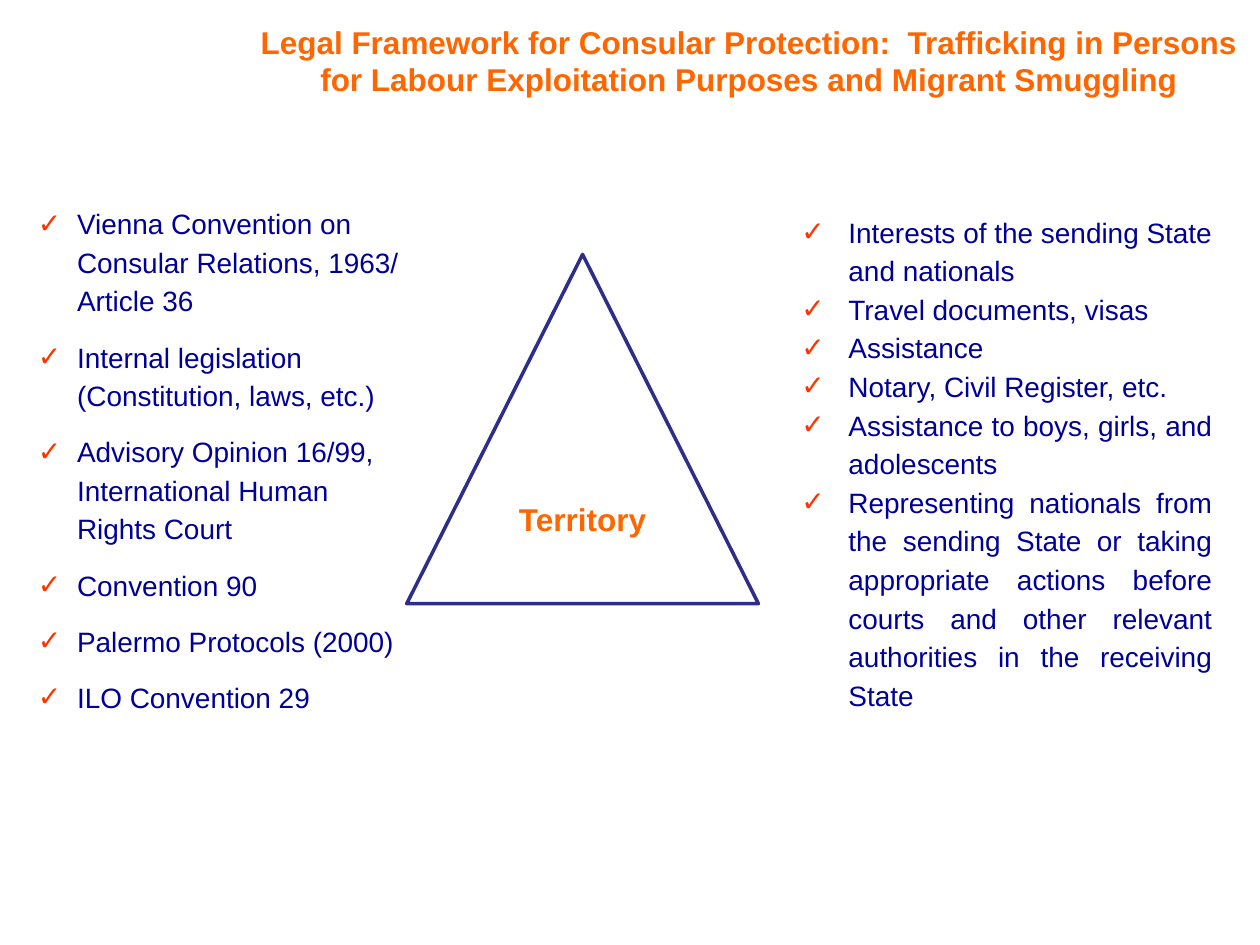
"""Build the slide on the legal framework for consular protection."""
from lxml import etree
from pptx import Presentation
from pptx.dml.color import RGBColor
from pptx.enum.shapes import MSO_SHAPE
from pptx.enum.text import MSO_ANCHOR, MSO_AUTO_SIZE, PP_ALIGN
from pptx.oxml.ns import qn
from pptx.util import Cm, Pt

TRIANGLE = MSO_SHAPE.ISOSCELES_TRIANGLE
TOP, MIDDLE = MSO_ANCHOR.TOP, MSO_ANCHOR.MIDDLE
NO_AUTOFIT = MSO_AUTO_SIZE.NONE
LEFT, CENTER, JUSTIFY = PP_ALIGN.LEFT, PP_ALIGN.CENTER, PP_ALIGN.JUSTIFY

ORANGE = RGBColor(0xFF, 0x66, 0x00)
RED = RGBColor(0xFF, 0x33, 0x00)
NAVY = RGBColor(0x00, 0x00, 0x99)
INDIGO = RGBColor(0x2D, 0x2D, 0x8A)
WHITE = RGBColor(0xFF, 0xFF, 0xFF)

FONT = "Arial"
LINE_SPACING = 1.15
PARAGRAPH_GAP = Pt(10)

TITLE = (
    "Legal Framework for Consular Protection:  Trafficking in Persons "
    "for Labour Exploitation Purposes and Migrant Smuggling"
)
TERRITORY = "Territory"
INSTRUMENTS = [
    "Vienna Convention on Consular Relations, 1963/ Article 36",
    "Internal legislation (Constitution, laws, etc.)",
    "Advisory Opinion 16/99, International Human Rights Court",
    "Convention 90",
    "Palermo Protocols (2000)",
    "ILO Convention 29",
]
FUNCTIONS = [
    "Interests of the sending State and nationals",
    "Travel documents, visas",
    "Assistance",
    "Notary, Civil Register, etc.",
    "Assistance to boys, girls, and adolescents",
    "Representing nationals from the sending State or taking appropriate "
    "actions before courts and other relevant authorities in the receiving State",
]

TITLE_BOX = (4.8, 0.33, 20.6, 1.8)
INSTRUMENTS_BOX = (0.51, 3.94, 7.8, 11.81)
FUNCTIONS_BOX = (15.9, 4.11, 8.79, 13.21)
TRIANGLE_BOX = (8.2, 5.13, 7.09, 7.04)


def place(shape, box):
    shape.left, shape.top, shape.width, shape.height = map(Cm, box)


def format_runs(paragraph, size, color, bold=False):
    for run in paragraph.runs:
        run.font.name = FONT
        run.font.size = Pt(size)
        run.font.bold = bold
        run.font.color.rgb = color


def add_check_bullet(paragraph, indent):
    properties = paragraph._p.get_or_add_pPr()
    properties.set("marL", str(Cm(indent)))
    properties.set("indent", str(-Cm(indent)))
    color = etree.SubElement(properties, qn("a:buClr"))
    etree.SubElement(color, qn("a:srgbClr"), val=str(RED))
    etree.SubElement(properties, qn("a:buFont"), typeface=FONT)
    etree.SubElement(properties, qn("a:buChar"), char="✓")


def fill_checklist(shape, box, items, indent, alignment, gap):
    place(shape, box)
    frame = shape.text_frame
    frame.text = "\n".join(items)
    frame.auto_size = NO_AUTOFIT
    frame.vertical_anchor = TOP
    for paragraph in frame.paragraphs:
        add_check_bullet(paragraph, indent)
        paragraph.alignment = alignment
        paragraph.line_spacing = LINE_SPACING
        paragraph.space_before = Pt(0)
        paragraph.space_after = gap
        format_runs(paragraph, 16, NAVY)


def fill_title(shape):
    place(shape, TITLE_BOX)
    frame = shape.text_frame
    frame.text = TITLE
    frame.auto_size = NO_AUTOFIT
    frame.vertical_anchor = TOP
    paragraph = frame.paragraphs[0]
    paragraph.alignment = CENTER
    format_runs(paragraph, 18, ORANGE, bold=True)


def add_territory(slide):
    triangle = slide.shapes.add_shape(TRIANGLE, *map(Cm, TRIANGLE_BOX))
    triangle.shadow.inherit = False
    triangle.fill.solid()
    triangle.fill.fore_color.rgb = WHITE
    triangle.line.color.rgb = INDIGO
    triangle.line.width = Pt(2)
    frame = triangle.text_frame
    frame.text = TERRITORY
    frame.vertical_anchor = MIDDLE
    paragraph = frame.paragraphs[0]
    paragraph.alignment = CENTER
    paragraph.line_spacing = LINE_SPACING
    paragraph.space_after = PARAGRAPH_GAP
    format_runs(paragraph, 18, ORANGE, bold=True)


def main():
    presentation = Presentation()
    presentation.slide_width = Cm(25.4)
    presentation.slide_height = Cm(19.05)
    two_content_layout = presentation.slide_layouts[3]
    slide = presentation.slides.add_slide(two_content_layout)
    title, instruments, functions = list(slide.placeholders)[:3]
    fill_title(title)
    fill_checklist(instruments, INSTRUMENTS_BOX, INSTRUMENTS, 0.79, LEFT, PARAGRAPH_GAP)
    fill_checklist(functions, FUNCTIONS_BOX, FUNCTIONS, 0.95, JUSTIFY, Pt(0))
    functions.text_frame.paragraphs[-1].space_after = PARAGRAPH_GAP
    functions.fill.solid()
    functions.fill.fore_color.rgb = WHITE
    add_territory(slide)
    presentation.save("out.pptx")


if __name__ == "__main__":
    main()
